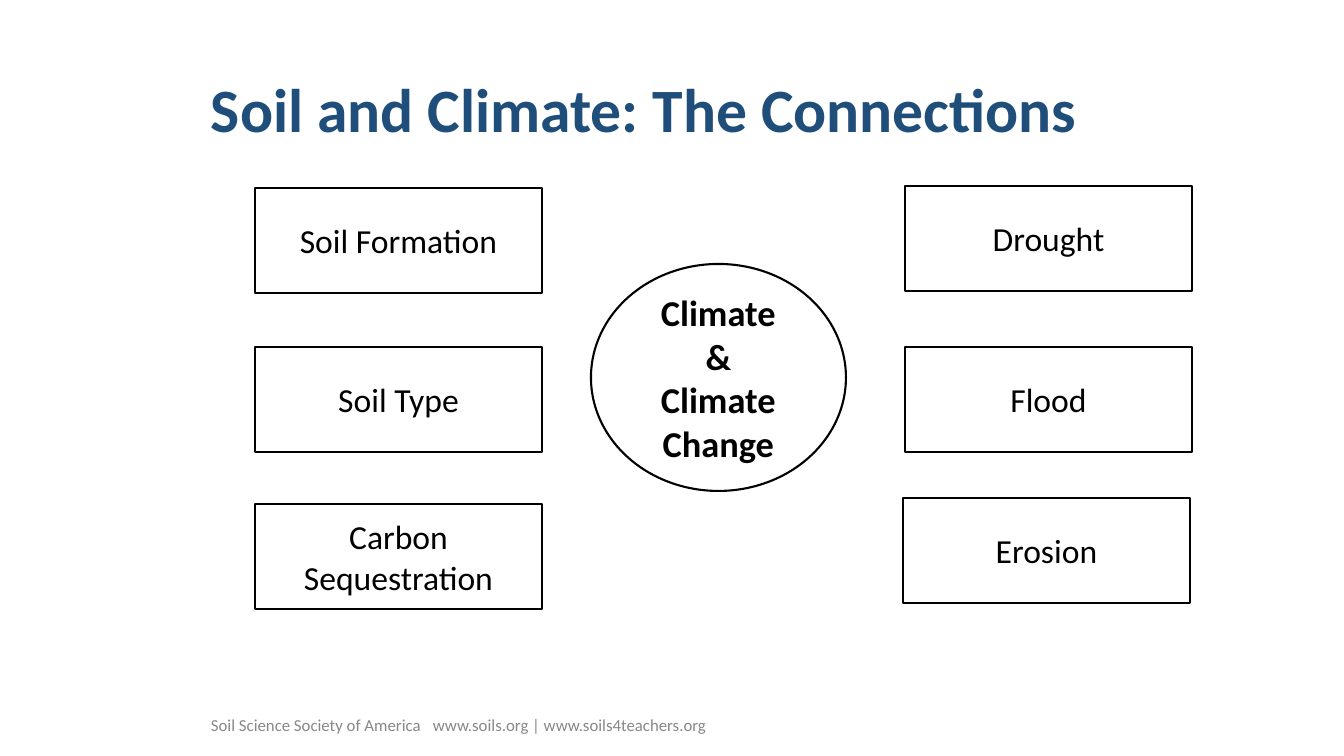
from lxml import etree
from pptx import Presentation
from pptx.dml.color import RGBColor
from pptx.enum.shapes import MSO_SHAPE
from pptx.enum.text import MSO_ANCHOR, PP_ALIGN
from pptx.oxml.ns import qn
from pptx.util import Pt

# Content
TITLE = "Soil and Climate: The Connections"
CENTRE = ["Climate", "&", "Climate Change"]
TOPICS = [  # text, left, top
    ("Soil Formation", 255, 188),
    ("Soil Type", 255, 347),
    ("Carbon Sequestration", 255, 504),
    ("Drought", 905, 186),
    ("Flood", 905, 347),
    ("Erosion", 903, 498),
]
FOOTER = "Soil Science Society of America\twww.soils.org | www.soils4teachers.org"

# Lengths in px: left, top, width, height
SLIDE_WIDTH, SLIDE_HEIGHT = 1344, 756
TITLE_AREA = (201, 40, 1051, 146)
CENTRE_AREA = (591, 264, 255, 227)
TOPIC_SIZE = (287, 105)
FOOTER_AREA = (201, 708, 671, 33)
FOOTER_TAB = 222
INSET = 10
HALF_INSET = 5

FONT = "Calibri"
BLACK = RGBColor(0x00, 0x00, 0x00)
WHITE = RGBColor(0xFF, 0xFF, 0xFF)
NAVY = RGBColor(0x1E, 0x4E, 0x79)
GREY = RGBColor(0x88, 0x88, 0x88)
RECTANGLE, OVAL = MSO_SHAPE.RECTANGLE, MSO_SHAPE.OVAL
MIDDLE = MSO_ANCHOR.MIDDLE
LEFT, CENTER = PP_ALIGN.LEFT, PP_ALIGN.CENTER


def px(length):
    return round(length * 914400 / 100.8)


def write(box, lines, size, color, bold=False, align=LEFT, inset_y=HALF_INSET):
    frame = box.text_frame
    frame.word_wrap = True
    frame.vertical_anchor = MIDDLE
    frame.margin_left = frame.margin_right = px(INSET)
    frame.margin_top = frame.margin_bottom = px(inset_y)
    for index, line in enumerate(lines):
        para = frame.add_paragraph() if index else frame.paragraphs[0]
        para.alignment = align
        span = para.add_run()
        span.text = line
        span.font.name = FONT
        span.font.size = Pt(size)
        span.font.bold = bold
        span.font.color.rgb = color


def add_text(page, area, line, size, color, bold=False):
    box = page.shapes.add_textbox(*map(px, area))
    write(box, [line], size, color, bold)
    return box.text_frame.paragraphs[0]


def add_outlined(page, kind, area, lines, size, bold=False):
    box = page.shapes.add_shape(kind, *map(px, area))
    box.shadow.inherit = False
    box.fill.solid()
    box.fill.fore_color.rgb = WHITE
    box.line.color.rgb = BLACK
    box.line.width = Pt(1.5)
    write(box, lines, size, BLACK, bold, CENTER, INSET)


def main():
    deck = Presentation()
    deck.slide_width, deck.slide_height = px(SLIDE_WIDTH), px(SLIDE_HEIGHT)
    page = deck.slides.add_slide(deck.slide_layouts[6])

    # Title
    title = add_text(page, TITLE_AREA, TITLE, 44, NAVY, bold=True)
    title.line_spacing = 0.9

    # Central idea and the topics around it
    add_outlined(page, OVAL, CENTRE_AREA, CENTRE, 26, bold=True)
    for text, left, top in TOPICS:
        add_outlined(page, RECTANGLE, (left, top, *TOPIC_SIZE), [text], 24)

    # Footer, with a tab stop before the web addresses
    footer = add_text(page, FOOTER_AREA, FOOTER, 12, GREY)
    tabs = etree.SubElement(footer._p.get_or_add_pPr(), qn("a:tabLst"))
    etree.SubElement(tabs, qn("a:tab"), pos=str(px(FOOTER_TAB)), algn="l")

    deck.save("out.pptx")


if __name__ == "__main__":
    main()
